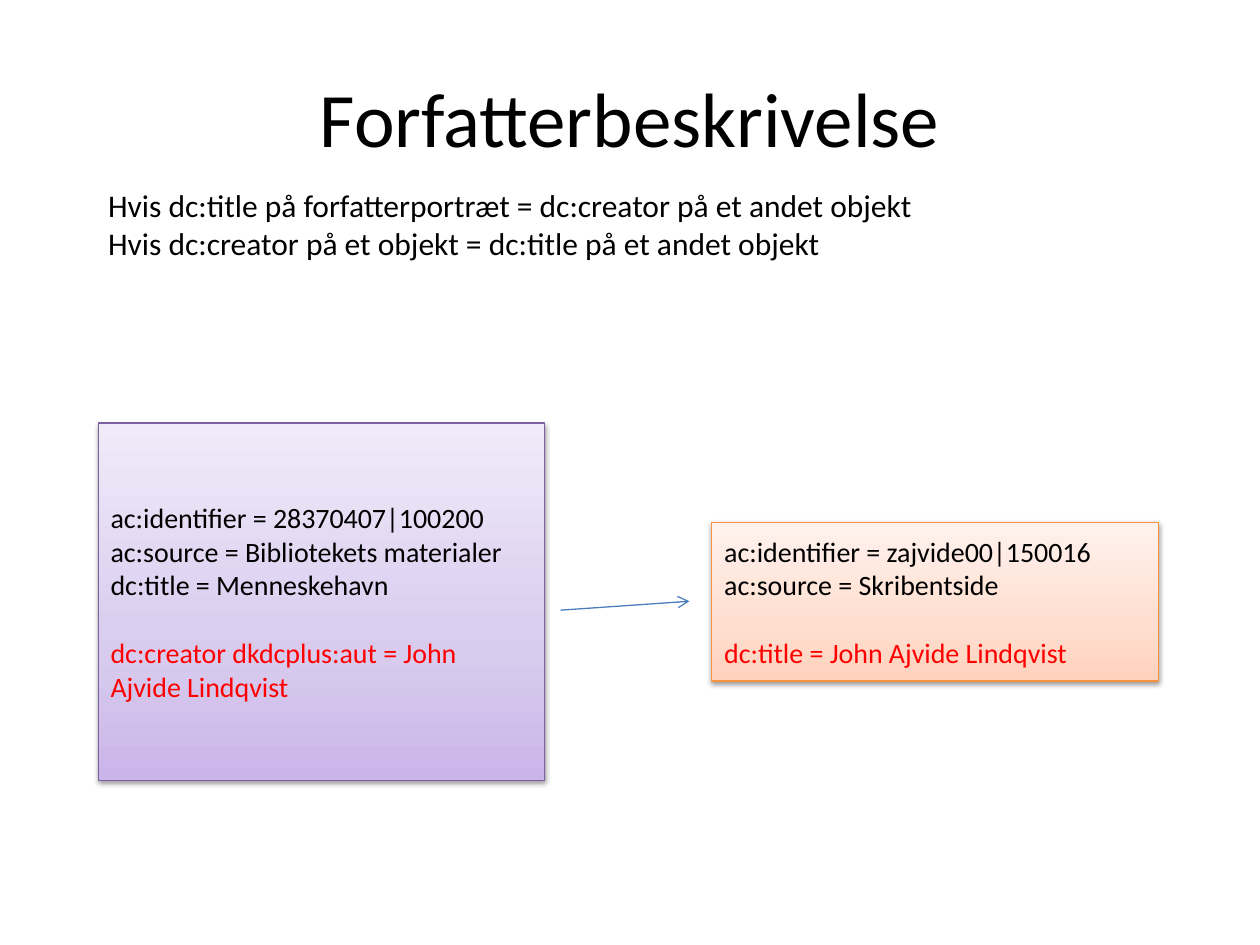
from copy import deepcopy
from pptx import Presentation
from pptx.dml.color import RGBColor
from pptx.enum.shapes import MSO_CONNECTOR as Connector, MSO_SHAPE as Shape
from pptx.enum.text import MSO_ANCHOR as Anchor, PP_ALIGN as Align
from pptx.oxml import parse_xml
from pptx.oxml.ns import nsdecls, qn
from pptx.util import Cm, Pt


def color(value):
    return RGBColor.from_string(value)


def write(box, lines, size, anchor, align=Align.LEFT):
    frame = box.text_frame
    frame.word_wrap = True
    frame.vertical_anchor = anchor
    for index, (text, ink, gap) in enumerate(lines):
        para = frame.paragraphs[0] if index == 0 else frame.add_paragraph()
        para.alignment = align
        para.space_before = Pt(gap)
        span = para.add_run()
        span.text = text
        span.font.name = "Calibri"
        span.font.size = Pt(size)
        span.font.color.rgb = color(ink)


BLACK, RED = "000000", "FF0000"
LINE_GAP = 19.5

deck = Presentation()
deck.slide_width, deck.slide_height = Cm(25.4), Cm(19.05)
page = deck.slides.add_slide(deck.slide_layouts[6])

title = page.shapes.add_textbox(Cm(1.27), Cm(0.76), Cm(22.86), Cm(3.18))
write(title, [("Forfatterbeskrivelse", BLACK, 0)], 44, Anchor.MIDDLE, Align.CENTER)

records = [
    (1.98, 8.53, 7.2, "7D60A0", ["C9B5E8", "D8CBEE", "F0EAF9"], [
        ("ac:identifier = 28370407|100200", BLACK, 0),
        ("ac:source = Bibliotekets materialer", BLACK, 0),
        ("dc:title = Menneskehavn", BLACK, 0),
        ("dc:creator dkdcplus:aut = John Ajvide Lindqvist", RED, LINE_GAP),
    ]),
    (14.35, 10.53, 3.2, "F69240", ["FFD2BD", "FFDED0", "FFF2ED"], [
        ("ac:identifier = zajvide00|150016", BLACK, 0),
        ("ac:source = Skribentside", BLACK, 0),
        ("dc:title = John Ajvide Lindqvist", RED, LINE_GAP),
    ]),
]
for left, top, height, outline, shades, lines in records:
    box = page.shapes.add_shape(Shape.RECTANGLE, Cm(left), Cm(top), Cm(9), Cm(height))
    box.line.color.rgb = color(outline)
    box.line.width = Pt(0.75)

    box.fill.gradient()
    box.fill.gradient_angle = 90
    properties = box._element.spPr
    stops = properties.find(qn("a:gradFill")).find(qn("a:gsLst"))
    stops.insert(1, deepcopy(stops[0]))
    for stop, position, shade in zip(box.fill.gradient_stops, [0, 0.35, 1], shades):
        stop.position = position
        stop.color.rgb = color(shade)

    box.shadow.inherit = False
    properties.find(qn("a:effectLst")).append(parse_xml(
        f'<a:outerShdw {nsdecls("a")} blurRad="{Pt(3.1)}" dist="{Pt(1.6)}" '
        'dir="5400000" rotWithShape="0">'
        '<a:srgbClr val="000000"><a:alpha val="38000"/></a:srgbClr></a:outerShdw>'))
    write(box, lines, 16, Anchor.MIDDLE)

arrow = page.shapes.add_connector(Connector.STRAIGHT, Cm(11.3), Cm(12.3), Cm(13.9), Cm(12.12))
arrow.line.color.rgb = color("4B7EBC")
arrow.line.width = Pt(0.75)
arrow.line._get_or_add_ln().append(parse_xml(f'<a:tailEnd {nsdecls("a")} type="arrow"/>'))
arrow._element.spPr.append(parse_xml(f'<a:effectLst {nsdecls("a")}/>'))

rules = page.shapes.add_textbox(Cm(1.93), Cm(3.63), Cm(21.41), Cm(1.8))
write(rules, [
    ("Hvis dc:title på forfatterportræt = dc:creator på et andet objekt", BLACK, 0),
    ("Hvis dc:creator på et objekt = dc:title på et andet objekt", BLACK, 0),
], 18, Anchor.TOP)

deck.save("out.pptx")
